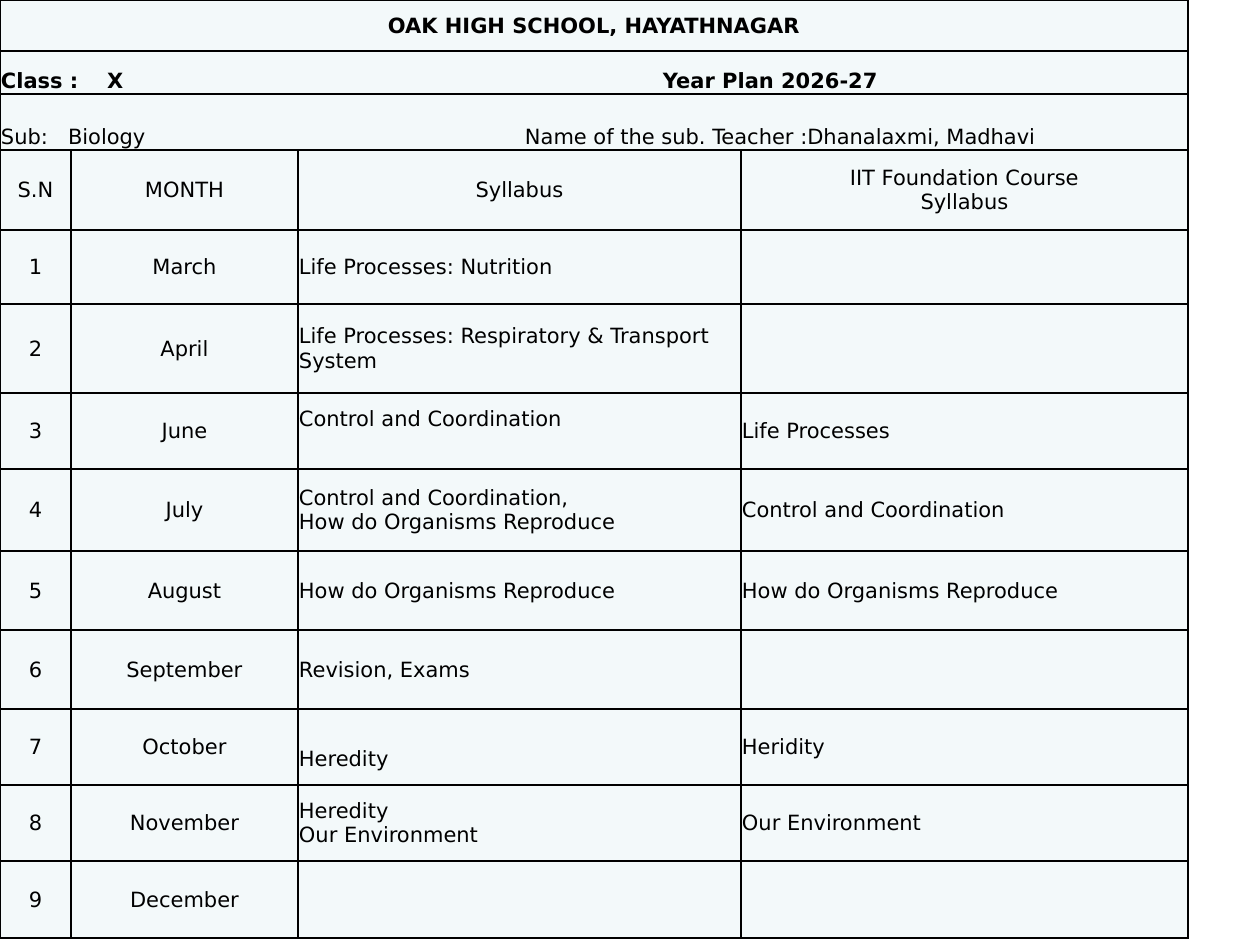
from dataclasses import dataclass

from lxml import etree
from pptx import Presentation
from pptx import util as u
from pptx.dml.color import RGBColor
from pptx.enum import text
from pptx.oxml import ns

PX_PER_INCH = 126


def px(length):
    return u.Inches(length / PX_PER_INCH)


def assign(target, values):
    for key, value in values.items():
        setattr(target, key, value)


@dataclass(frozen=True)
class Theme:
    font: str = "DejaVu Sans"
    size: int = 12
    ink: str = "000000"
    paper: str = "F3F9FA"
    rule: float = 1


class PlanSlide:
    def __init__(self, theme, width, height):
        self.theme = theme
        self.deck = Presentation()
        assign(self.deck, {"slide_width": px(width), "slide_height": px(height)})
        self.slide = self.deck.slides.add_slide(self.deck.slide_layouts[6])

    def table(self, columns, heights):
        frame = self.slide.shapes.add_table(
            len(heights), len(columns), 0, 0, px(sum(columns)), px(sum(heights)))
        grid = frame.table
        assign(grid, {"first_row": False, "horz_banding": False})
        for column, width in zip(grid.columns, columns):
            column.width = px(width)
        for row, height in zip(grid.rows, heights):
            row.height = px(height)
        for cell in grid.iter_cells():
            self.border(cell)
            cell.fill.solid()
            cell.fill.fore_color.rgb = RGBColor.from_string(self.theme.paper)
        return grid

    def border(self, cell):
        properties = cell._tc.get_or_add_tcPr()
        for side in ("a:lnL", "a:lnR", "a:lnT", "a:lnB"):
            line = etree.SubElement(
                properties, ns.qn(side), w=str(u.Pt(self.theme.rule)))
            fill = etree.SubElement(line, ns.qn("a:solidFill"))
            etree.SubElement(fill, ns.qn("a:srgbClr"), val=self.theme.ink)

    def cell(self, cell, wording, centred=False, bold=False,
             anchor=text.MSO_ANCHOR.MIDDLE, tabs=(), above=1, below=0):
        assign(cell, {
            "margin_left": px(1), "margin_right": px(1),
            "margin_top": px(above), "margin_bottom": px(below),
            "vertical_anchor": anchor})
        cell.text = wording
        for paragraph in cell.text_frame.paragraphs:
            if tabs:
                self.tab_stops(paragraph, tabs)
            paragraph.alignment = (
                text.PP_ALIGN.CENTER if centred else text.PP_ALIGN.LEFT)
            for run in paragraph.runs:
                assign(run.font, {"name": self.theme.font,
                                  "size": u.Pt(self.theme.size), "bold": bold})
                run.font.color.rgb = RGBColor.from_string(self.theme.ink)

    def tab_stops(self, paragraph, tabs):
        stops = etree.SubElement(
            paragraph._p.get_or_add_pPr(), ns.qn("a:tabLst"))
        for tab in tabs:
            etree.SubElement(stops, ns.qn("a:tab"), pos=str(px(tab)), algn="l")


COLUMNS = (71, 227, 443, 447)
HEIGHTS = (51, 43, 56, 80, 74, 89, 76, 82, 79, 79, 76, 76, 77)
BANNERS = (
    ("OAK HIGH SCHOOL, HAYATHNAGAR", {"centred": True, "bold": True}),
    ("Class :\tX\tYear Plan 2026-27",
     {"bold": True, "anchor": text.MSO_ANCHOR.BOTTOM, "tabs": (106, 662)}),
    ("Sub:\tBiology\tName of the sub. Teacher :Dhanalaxmi, Madhavi",
     {"anchor": text.MSO_ANCHOR.BOTTOM, "tabs": (67, 524)}),
)
HEADINGS = ("S.N", "MONTH", "Syllabus", "IIT Foundation Course\nSyllabus")
MONTHS = (
    ("March", "Life Processes: Nutrition", ""),
    ("April", "Life Processes: Respiratory & Transport System", ""),
    ("June", "Control and Coordination", "Life Processes"),
    ("July", "Control and Coordination,\nHow do Organisms Reproduce",
     "Control and Coordination"),
    ("August", "How do Organisms Reproduce", "How do Organisms Reproduce"),
    ("September", "Revision, Exams", ""),
    ("October", "Heredity", "Heridity"),
    ("November", "Heredity\vOur Environment", "Our Environment"),
    ("December", "", ""),
)
SYLLABUS_OFFSETS = {"June": {"below": 24}, "October": {"above": 25}}


def main():
    plan = PlanSlide(Theme(), 1260, 945)
    grid = plan.table(COLUMNS, HEIGHTS)
    for row, (wording, style) in enumerate(BANNERS):
        grid.cell(row, 0).merge(grid.cell(row, len(COLUMNS) - 1))
        plan.cell(grid.cell(row, 0), wording, **style)
    heading_row = len(BANNERS)
    for column, heading in enumerate(HEADINGS):
        plan.cell(grid.cell(heading_row, column), heading, centred=True)
    for number, (month, syllabus, foundation) in enumerate(MONTHS, 1):
        row = heading_row + number
        plan.cell(grid.cell(row, 0), str(number), centred=True)
        plan.cell(grid.cell(row, 1), month, centred=True)
        plan.cell(grid.cell(row, 2), syllabus, **SYLLABUS_OFFSETS.get(month, {}))
        plan.cell(grid.cell(row, 3), foundation)
    plan.deck.save("out.pptx")


if __name__ == "__main__":
    main()
